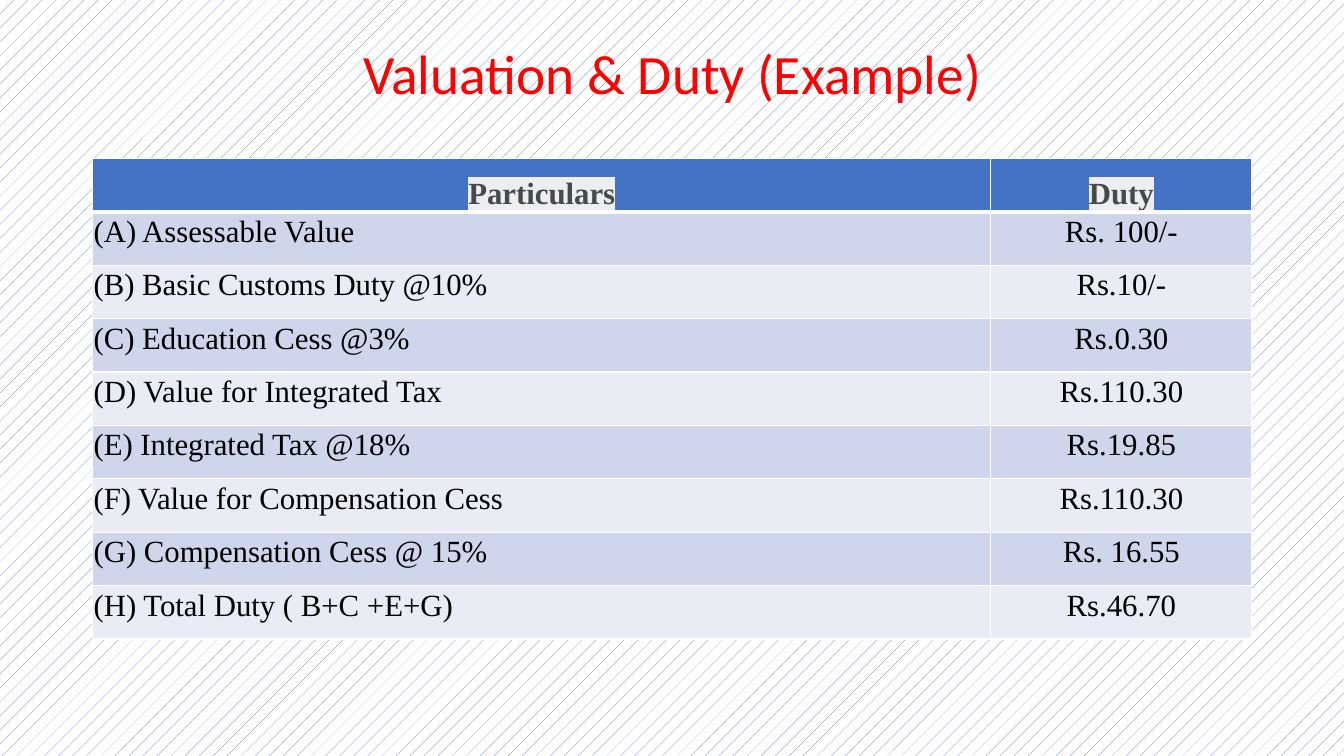
from lxml.etree import SubElement
from pptx import Presentation
from pptx.dml.color import RGBColor
from pptx.enum.dml import MSO_PATTERN
from pptx.enum.text import MSO_ANCHOR, PP_ALIGN
from pptx.oxml.ns import qn
from pptx.util import Pt

TITLE = "Valuation & Duty (Example)"
ROWS = [
    ("Particulars", "Duty"),
    ("(A) Assessable Value", "Rs. 100/-"),
    ("(B) Basic Customs Duty @10%", "Rs.10/-"),
    ("(C) Education Cess @3%", "Rs.0.30"),
    ("(D) Value for Integrated Tax", "Rs.110.30"),
    ("(E) Integrated Tax @18%", "Rs.19.85"),
    ("(F) Value for Compensation Cess", "Rs.110.30"),
    ("(G) Compensation Cess @ 15%", "Rs. 16.55"),
    ("(H) Total Duty ( B+C +E+G)", "Rs.46.70"),
]
COLORS = {
    "title": "FF0000", "accent": "4472C4", "white": "FFFFFF",
    "header_text": "464A4C", "highlight": "ECEEEF", "text": "000000",
    "band_dark": "CFD5EA", "band_light": "E9EBF5",
}
LEFT, WIDTH = 66.24, 828
TITLE_TOP, TITLE_HEIGHT = 28.8, 51.84
TABLE_TOP, ROW_HEIGHT = 113.04, 38.16
COLUMN_WIDTHS = (641.5, 186.5)
INSET = 0.6


def color(name):
    return RGBColor.from_string(COLORS[name])


def style_paragraph(paragraph, font_name, size, color_name, spacing):
    paragraph.line_spacing = spacing
    paragraph.font.name = font_name
    paragraph.font.size = Pt(size)
    paragraph.font.color.rgb = color(color_name)


def add_color(parent, tag, name):
    holder = SubElement(parent, qn(tag))
    SubElement(holder, qn("a:srgbClr"), val=COLORS[name])


def add_borders(cell, row):
    widths = {"a:lnL": 1, "a:lnR": 1, "a:lnT": 3 if row == 1 else 1, "a:lnB": 3 if row == 0 else 1}
    properties = cell._tc.get_or_add_tcPr()
    for tag, width in widths.items():
        line = SubElement(properties, qn(tag), w=str(Pt(width)))
        add_color(line, "a:solidFill", "white")


def fill_cell(cell, text, row, column):
    header = row == 0
    add_borders(cell, row)
    cell.fill.solid()
    band = "band_dark" if row % 2 else "band_light"
    cell.fill.fore_color.rgb = color("accent" if header else band)
    cell.margin_left = cell.margin_right = cell.margin_top = cell.margin_bottom = Pt(INSET)
    cell.vertical_anchor = MSO_ANCHOR.BOTTOM if header else MSO_ANCHOR.TOP
    paragraph = cell.text_frame.paragraphs[0]
    span = paragraph.add_run()
    span.text = text
    style_paragraph(paragraph, "Times New Roman", 22, "header_text" if header else "text", 1.07)
    paragraph.font.bold = header
    paragraph.space_after = Pt(8)
    paragraph.alignment = PP_ALIGN.CENTER if header or column else PP_ALIGN.LEFT
    if header:
        add_color(span._r.get_or_add_rPr(), "a:highlight", "highlight")


def add_title(page):
    box = page.shapes.add_textbox(Pt(LEFT), Pt(TITLE_TOP), Pt(WIDTH), Pt(TITLE_HEIGHT))
    frame = box.text_frame
    frame.word_wrap = True
    frame.vertical_anchor = MSO_ANCHOR.MIDDLE
    paragraph = frame.paragraphs[0]
    paragraph.text = TITLE
    paragraph.alignment = PP_ALIGN.CENTER
    style_paragraph(paragraph, "Calibri", 39.6, "title", 0.9)


def add_duty_table(page):
    height = ROW_HEIGHT * len(ROWS)
    table = page.shapes.add_table(
        len(ROWS), len(COLUMN_WIDTHS), Pt(LEFT), Pt(TABLE_TOP), Pt(WIDTH), Pt(height)
    ).table
    for column, width in zip(table.columns, COLUMN_WIDTHS):
        column.width = Pt(width)
    for row, texts in enumerate(ROWS):
        table.rows[row].height = Pt(ROW_HEIGHT)
        for column, text in enumerate(texts):
            fill_cell(table.cell(row, column), text, row, column)


def main():
    """Build the valuation and duty slide."""
    deck = Presentation()
    deck.slide_width, deck.slide_height = Pt(960), Pt(540)
    page = deck.slides.add_slide(deck.slide_layouts[6])
    backdrop = page.background.fill
    backdrop.patterned()
    backdrop.pattern = MSO_PATTERN.PERCENT_5
    backdrop.fore_color.rgb = color("accent")
    backdrop.back_color.rgb = color("white")
    add_title(page)
    add_duty_table(page)
    deck.save("out.pptx")


if __name__ == "__main__":
    main()
